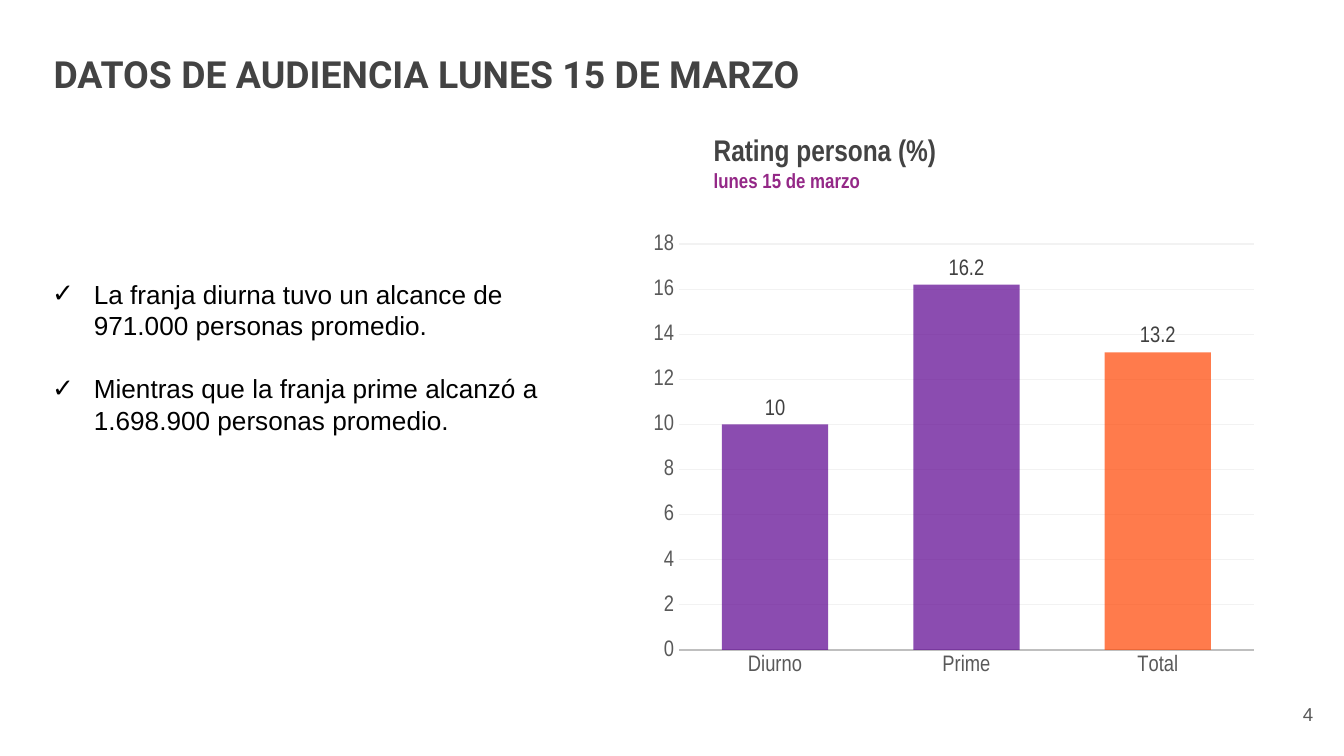
"""Build the audience slide: heading, two findings and a rating chart."""
from lxml import etree
from pptx import Presentation
from pptx import util as u
from pptx.chart.data import CategoryChartData
from pptx.dml.color import RGBColor
from pptx.enum import chart as ch, text as tx
from pptx.oxml.ns import qn

HUES = {
    "dark": "434343", "plum": "942887", "black": "000000", "gray": "595959",
    "label": "404040", "axis": "BFBFBF", "grid": "F2F2F2",
    "bar": "5B008F", "total": "FF4400",
}
RATES = {"Diurno": 10, "Prime": 16.2, "Total": 13.2}
FACTS = [
    "La franja diurna tuvo un alcance de 971.000 personas promedio.",
    "Mientras que la franja prime alcanzó a 1.698.900 personas promedio.",
]


def rgb(hue):
    return RGBColor.from_string(HUES[hue])


def style(font, name, size, hue, bold=False):
    font.name, font.size, font.bold = name, u.Pt(size), bold
    font.color.rgb = rgb(hue)


def place(shape, left, top, width, height):
    shape.left, shape.top = u.Inches(left), u.Inches(top)
    shape.width, shape.height = u.Inches(width), u.Inches(height)


def fill_frame(frame, words, looks, inset=0.1, anchor=tx.MSO_ANCHOR.TOP,
               align=tx.PP_ALIGN.LEFT):
    frame.text = words
    frame.word_wrap = True
    frame.auto_size = tx.MSO_AUTO_SIZE.NONE
    frame.vertical_anchor = anchor
    frame.margin_left = frame.margin_right = u.Inches(0.1)
    frame.margin_top = frame.margin_bottom = u.Inches(inset)
    for para, look in zip(frame.paragraphs, looks):
        para.alignment = align
        for run in para.runs:
            style(run.font, *look)


def add_text(slide, box, words, looks, **opts):
    shape = slide.shapes.add_textbox(*map(u.Inches, box))
    fill_frame(shape.text_frame, words, looks, **opts)
    return shape.text_frame


def add_title(slide):
    title = slide.shapes.title
    place(title, 5.21, 0.88, 3.7, 0.79)
    fill_frame(title.text_frame, "Rating persona (%)\nlunes 15 de marzo",
               [("Arial Narrow", 16, "dark", True),
                ("Arial Narrow", 11, "plum", True)])
    for para in title.text_frame.paragraphs:
        para.space_before = u.Pt(0)
        para.line_spacing = 1.0


def add_bullet(para):
    props = para._p.get_or_add_pPr()
    props.set("marL", str(u.Inches(0.31)))
    props.set("indent", str(-u.Inches(0.31)))
    tint = etree.SubElement(props, qn("a:buClr"))
    etree.SubElement(tint, qn("a:srgbClr")).set("val", HUES["black"])
    etree.SubElement(props, qn("a:buFont")).set("typeface", "Arial")
    etree.SubElement(props, qn("a:buChar")).set("char", "✓")


def add_facts(slide):
    frame = add_text(slide, (0.29, 2.02, 4.2, 1.51), "\n".join(FACTS),
                     [("Arial", 14, "black")] * len(FACTS), inset=0.05)
    frame.auto_size = tx.MSO_AUTO_SIZE.SHAPE_TO_FIT_TEXT
    frame.paragraphs[0].space_after = u.Pt(17)
    for para in frame.paragraphs:
        add_bullet(para)


def style_axes(chart):
    for axis in (chart.category_axis, chart.value_axis):
        axis.major_tick_mark = axis.minor_tick_mark = ch.XL_TICK_MARK.NONE
        style(axis.tick_labels.font, "Arial Narrow", 12, "gray")
    line = chart.category_axis.format.line
    line.color.rgb, line.width = rgb("axis"), u.Pt(1.25)
    value = chart.value_axis
    value.minimum_scale, value.maximum_scale, value.major_unit = 0, 18, 2
    value.format.line.fill.background()
    grid = value.major_gridlines.format.line
    grid.color.rgb, grid.width = rgb("grid"), u.Pt(0.75)


def style_bars(chart):
    plot = chart.plots[0]
    plot.vary_by_categories = False
    plot.gap_width, plot.overlap = 80, 25
    bars = plot.series[0]
    for part, hue in ((bars, "bar"), (bars.points[2], "total")):
        part.format.fill.solid()
        part.format.fill.fore_color.rgb = rgb(hue)
    fills = "//c:ser/c:spPr//a:srgbClr | //c:ser/c:dPt/c:spPr//a:srgbClr"
    for node in chart.element.xpath(fills):
        etree.SubElement(node, qn("a:alpha")).set("val", "70000")
    labels = bars.data_labels
    labels.show_value = True
    labels.position = ch.XL_LABEL_POSITION.OUTSIDE_END
    style(labels.font, "Arial Narrow", 12, "label")


def add_rates(slide):
    data = CategoryChartData()
    data.categories = list(RATES)
    data.add_series("Series 1", list(RATES.values()))
    box = map(u.Inches, (4.77, 1.67, 4.65, 3.43))
    chart = slide.shapes.add_chart(
        ch.XL_CHART_TYPE.COLUMN_CLUSTERED, *box, data).chart
    chart.has_legend = chart.has_title = False
    style(chart.font, "Arial Narrow", 10, "black")
    style_axes(chart)
    style_bars(chart)


def main():
    deck = Presentation()
    deck.slide_width, deck.slide_height = u.Inches(10), u.Inches(10 * 9 / 16)
    slide = deck.slides.add_slide(deck.slide_layouts[5])
    add_title(slide)
    add_rates(slide)
    add_text(slide, (0.3, 0.28, 8.39, 0.62),
             "DATOS DE AUDIENCIA LUNES 15 DE MARZO",
             [("Roboto", 20, "dark", True)])
    add_facts(slide)
    add_text(slide, (9.27, 5.1, 0.6, 0.43), "4", [("Arial", 10, "gray")],
             anchor=tx.MSO_ANCHOR.MIDDLE, align=tx.PP_ALIGN.RIGHT)
    deck.save("out.pptx")


if __name__ == "__main__":
    main()
